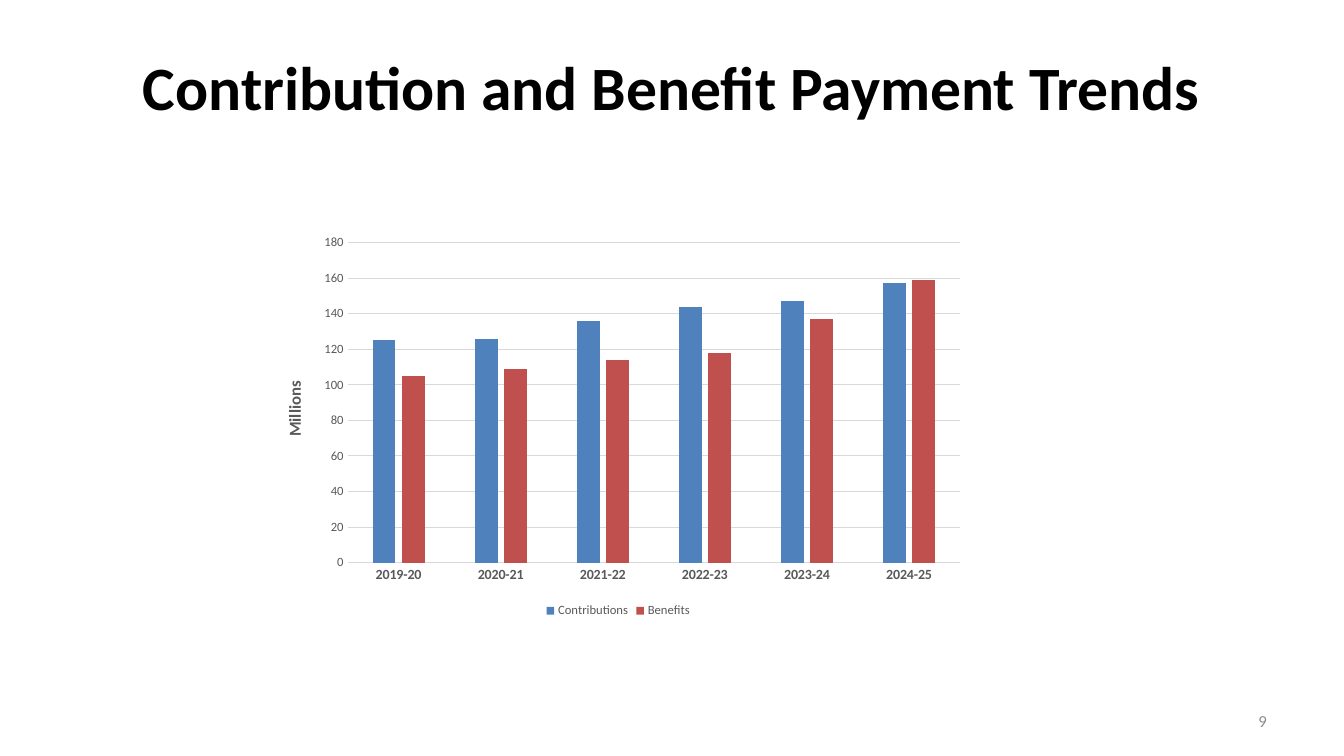
from dataclasses import dataclass

from lxml import etree
from pptx import Presentation
from pptx import util as u
from pptx.chart.data import CategoryChartData
from pptx.dml.color import RGBColor
from pptx.enum import chart as c
from pptx.enum import text as t
from pptx.oxml import ns

WIDTH, HEIGHT = u.Inches(13.33), u.Inches(7.5)


@dataclass(frozen=True)
class Theme:
    font: str = "Calibri"
    ink: str = "000000"
    label: str = "595959"
    grid: str = "D9D9D9"
    number: str = "8C8C8C"
    contributions: str = "4F81BD"
    benefits: str = "C0504D"
    title_size: int = 44
    number_size: int = 12
    axis_title_size: int = 12
    category_size: int = 10
    small_size: int = 9
    line: float = 0.75


THEME = Theme()
YEARS = ["2019-20", "2020-21", "2021-22", "2022-23", "2023-24", "2024-25"]
SERIES = [
    ("Contributions", [125, 126, 136, 144, 147, 157], THEME.contributions),
    ("Benefits", [105, 109, 114, 118, 137, 159], THEME.benefits),
]


def share(left, top, width, height):
    """Turn shares of the slide's size into a box in EMU."""
    return (int(left * WIDTH), int(top * HEIGHT),
            int(width * WIDTH), int(height * HEIGHT))


def style(font, size, color, bold=False):
    font.name, font.size, font.bold = THEME.font, u.Pt(size), bold
    font.color.rgb = RGBColor.from_string(color)


def style_line(line):
    line.color.rgb = RGBColor.from_string(THEME.grid)
    line.width = u.Pt(THEME.line)


def write(shape, words, align, size, color, bold=False):
    frame = shape.text_frame
    frame.text = words
    frame.word_wrap = True
    frame.vertical_anchor = t.MSO_ANCHOR.MIDDLE
    para = frame.paragraphs[0]
    para.alignment = align
    style(para.runs[0].font, size, color, bold)


def add_title(page, box):
    title = page.shapes.title
    title.left, title.top, title.width, title.height = box
    write(title, "Contribution and Benefit Payment Trends",
          t.PP_ALIGN.CENTER, THEME.title_size, THEME.ink, True)


def add_page_number(page, box):
    write(page.shapes.add_textbox(*box), "9",
          t.PP_ALIGN.RIGHT, THEME.number_size, THEME.number)


def place_plot(chart, **shares):
    """Fix the inner plot area at shares (x, y, w, h) of the chart."""
    plot_area = chart.plots[0]._element.getparent()
    for old in plot_area.findall(ns.qn("c:layout")):
        plot_area.remove(old)
    layout = etree.Element(ns.qn("c:layout"))
    manual = etree.SubElement(layout, ns.qn("c:manualLayout"))
    settings = {"layoutTarget": "inner", "xMode": "edge", "yMode": "edge", **shares}
    for name, value in settings.items():
        etree.SubElement(manual, ns.qn(f"c:{name}")).set("val", str(value))
    plot_area.insert(0, layout)


def style_axes(chart):
    years, amounts = chart.category_axis, chart.value_axis
    for axis in (years, amounts):
        axis.major_tick_mark = axis.minor_tick_mark = c.XL_TICK_MARK.NONE
    style(years.tick_labels.font, THEME.category_size, THEME.label, True)
    style_line(years.format.line)

    style(amounts.tick_labels.font, THEME.small_size, THEME.label)
    amounts.format.line.fill.background()
    amounts.minimum_scale, amounts.maximum_scale, amounts.major_unit = 0, 180, 20
    style_line(amounts.major_gridlines.format.line)
    heading = amounts.axis_title.text_frame
    heading.text = "Millions"
    style(heading.paragraphs[0].runs[0].font, THEME.axis_title_size, THEME.label, True)


def add_trend_chart(page, box):
    data = CategoryChartData()
    data.categories = YEARS
    for name, values, _ in SERIES:
        data.add_series(name, values)
    chart = page.shapes.add_chart(c.XL_CHART_TYPE.COLUMN_CLUSTERED, *box, data).chart
    style(chart.font, THEME.category_size, THEME.ink)
    chart.has_title = False

    chart.has_legend = True
    chart.legend.position = c.XL_LEGEND_POSITION.BOTTOM
    chart.legend.include_in_layout = False
    style(chart.legend.font, THEME.small_size, THEME.label)

    plot = chart.plots[0]
    plot.vary_by_categories = False
    plot.gap_width, plot.overlap = 219, -27
    for series, (_, _, color) in zip(plot.series, SERIES):
        series.format.fill.solid()
        series.format.fill.fore_color.rgb = RGBColor.from_string(color)
    style_axes(chart)
    place_plot(chart, x=0.12, y=0.04, w=0.86, h=0.81)


def main():
    deck = Presentation()
    deck.slide_width, deck.slide_height = WIDTH, HEIGHT
    page = deck.slides.add_slide(deck.slide_layouts.get_by_name("Title Only"))
    add_title(page, share(0.05, 0.03, 0.9, 0.167))
    add_page_number(page, share(0.717, 0.927, 0.233, 0.053))
    add_trend_chart(page, share(0.195, 0.3, 0.53, 0.523))
    deck.save("out.pptx")


if __name__ == "__main__":
    main()
